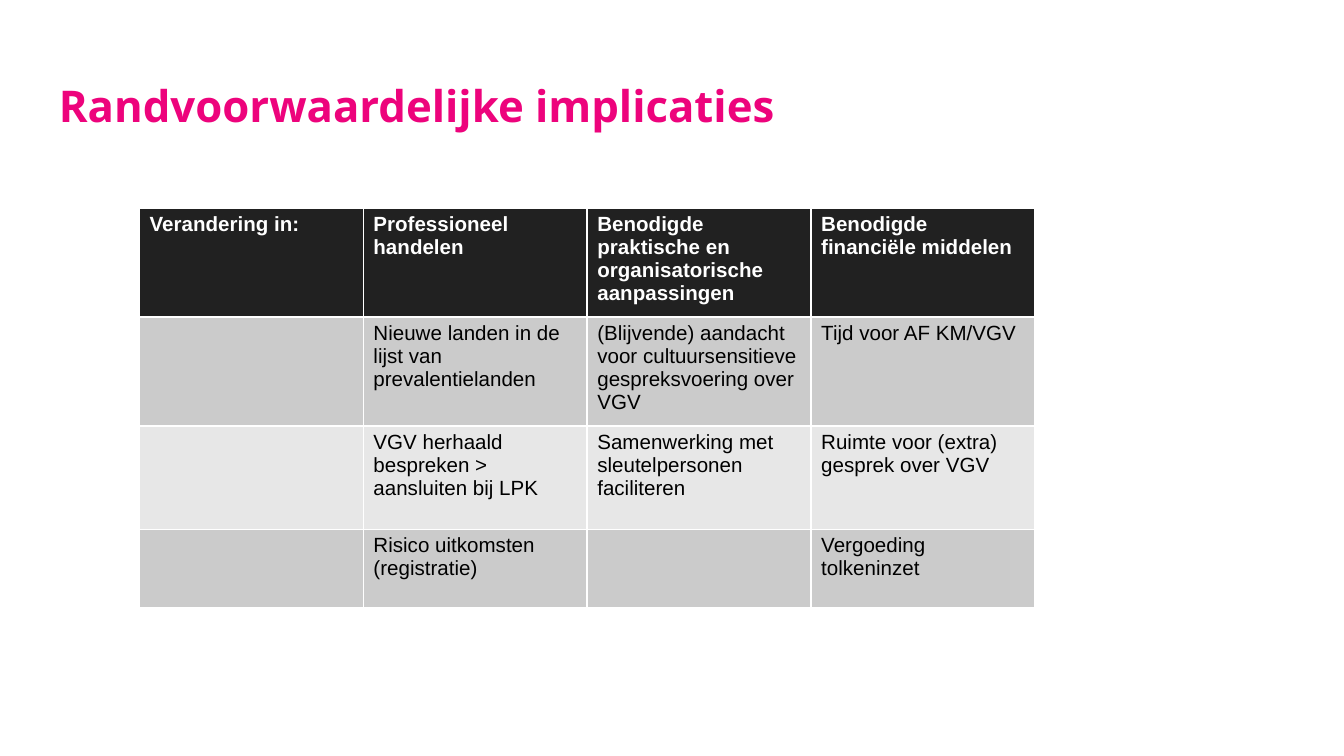
from dataclasses import dataclass

from pptx import Presentation
from pptx import util as u
from pptx.dml.color import RGBColor
from pptx.enum import text


@dataclass(frozen=True)
class Theme:
    accent: str = "ED037C"
    header: str = "212121"
    bands: tuple = ("CBCBCB", "E7E7E7")
    light: str = "FFFFFF"
    dark: str = "000000"
    title_font: str = "Open Sans"
    body_font: str = "Arial"
    title_size: float = 23.4
    body_size: float = 11


THEME = Theme()
WIDTH = u.Inches(10)
HEIGHT = WIDTH * 9 // 16
TITLE_BOX = (3.4, 8.7, 93.2, 11.2)
TABLE_BOX = (10.38, 27.55, 66.64, 51.1)
ROW_UNITS = (75, 77, 77, 58)
ROWS = (
    ("Verandering in:", "Professioneel handelen",
     "Benodigde praktische en organisatorische aanpassingen",
     "Benodigde financiële middelen"),
    ("", "Nieuwe landen in de lijst van prevalentielanden",
     "(Blijvende) aandacht voor cultuursensitieve gespreksvoering over VGV",
     "Tijd voor AF KM/VGV"),
    ("", "VGV herhaald bespreken > aansluiten bij LPK",
     "Samenwerking met sleutelpersonen faciliteren",
     "Ruimte voor (extra) gesprek over VGV"),
    ("", "Risico uitkomsten (registratie)", "", "Vergoeding tolkeninzet"),
)


def to_slide(box):
    x, y, w, h = (share / 100 for share in box)
    return int(x * WIDTH), int(y * HEIGHT), int(w * WIDTH), int(h * HEIGHT)


def write(tf, words, *, font, size, color, bold=False):
    p = tf.paragraphs[0]
    p.font.size = u.Pt(size)
    if words:
        r = p.add_run()
        r.text = words
        r.font.name = font
        r.font.size = u.Pt(size)
        r.font.bold = bold
        r.font.color.rgb = RGBColor.from_string(color)


def add_title(slide, box, words):
    tf = slide.shapes.add_textbox(*to_slide(box)).text_frame
    tf.word_wrap = True
    tf.vertical_anchor = text.MSO_ANCHOR.TOP
    tf.margin_left = tf.margin_right = u.Inches(0.1)
    tf.margin_top = tf.margin_bottom = u.Inches(0.1)
    write(tf, words, font=THEME.title_font, size=THEME.title_size,
          color=THEME.accent, bold=True)


def add_implications(slide, box, rows):
    x, y, w, h = to_slide(box)
    table = slide.shapes.add_table(len(rows), len(rows[0]), x, y, w, h).table
    for column in table.columns:
        column.width = w // len(rows[0])
    for i, (row, units) in enumerate(zip(rows, ROW_UNITS)):
        table.rows[i].height = h * units // sum(ROW_UNITS)
        is_header = i == 0
        fill = THEME.header if is_header else THEME.bands[(i - 1) % 2]
        for j, words in enumerate(row):
            cell = table.cell(i, j)
            cell.margin_left = cell.margin_right = u.Pt(5.4)
            cell.margin_top = cell.margin_bottom = u.Pt(2.7)
            cell.fill.solid()
            cell.fill.fore_color.rgb = RGBColor.from_string(fill)
            write(cell.text_frame, words, font=THEME.body_font,
                  size=THEME.body_size, bold=is_header,
                  color=THEME.light if is_header else THEME.dark)


def main():
    prs = Presentation()
    prs.slide_width, prs.slide_height = WIDTH, HEIGHT
    slide = prs.slides.add_slide(prs.slide_layouts[6])
    add_title(slide, TITLE_BOX, "Randvoorwaardelijke implicaties")
    add_implications(slide, TABLE_BOX, ROWS)
    prs.save("out.pptx")


if __name__ == "__main__":
    main()
